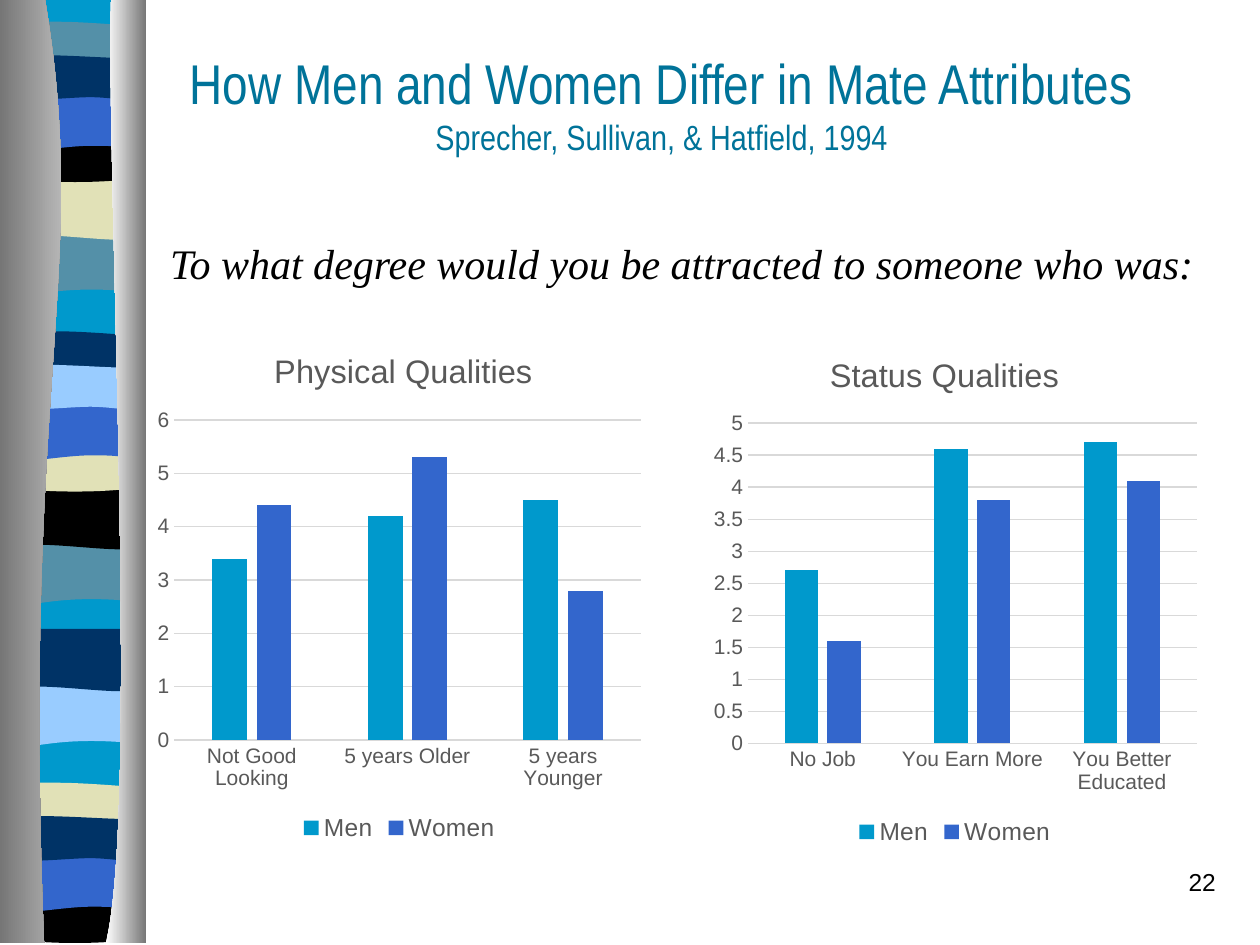
from dataclasses import dataclass

from lxml.etree import SubElement
from pptx import Presentation
from pptx.chart.data import CategoryChartData as ChartData
from pptx.dml.color import RGBColor as Rgb
from pptx.enum.chart import XL_CHART_TYPE as ChartType
from pptx.enum.chart import XL_LEGEND_POSITION as LegendPos
from pptx.enum.chart import XL_TICK_MARK as Tick
from pptx.enum.text import MSO_ANCHOR as Anchor
from pptx.enum.text import PP_ALIGN as Align
from pptx.oxml.ns import qn
from pptx.util import Cm, Pt


@dataclass(frozen=True)
class Theme:
    cyan: str = "0099CC"
    blue: str = "3366CC"
    navy: str = "003366"
    teal: str = "5490A8"
    sand: str = "E1E1B7"
    sky: str = "99CCFF"
    black: str = "000000"
    white: str = "FFFFFF"
    heading: str = "007399"
    label: str = "595959"
    grid: str = "D9D9D9"
    fold_dark: str = "767676"
    fold_light: str = "D5D5D5"
    sans: str = "Arial"
    narrow: str = "Arial Narrow"
    serif: str = "Times New Roman"
    title_size: float = 32
    source_size: float = 20
    question_size: float = 24
    chart_title_size: float = 18.6
    small_size: float = 14
    axis_size: float = 12


def apply_format(target, values):
    for name, value in values.items():
        setattr(target, name, value)


class SlideMaker:
    def __init__(self, slide, theme):
        self.shapes, self.theme = slide.shapes, theme

    def font(self, font, face, size, color, italic=False):
        apply_format(font, {"name": face, "size": Pt(size), "bold": False, "italic": italic})
        font.color.rgb = Rgb.from_string(color)

    def area(self, outline, *colors, top=0):
        """Closed outline of steps: one point is a line, three are a Bezier curve.

        One colour fills it, two make a gradient to the right.
        """
        (start,), *steps = [[(Cm(x), Cm(y + top)) for x, y in step] for step in outline]
        builder = self.shapes.build_freeform(*start)
        builder.add_line_segments([point for step in steps for point in step], close=True)
        shape = builder.convert_to_shape()
        lines = iter(list(shape._element.iter(qn("a:lnTo"))))
        for step in steps:
            parts = [next(lines) for _ in step]
            if len(parts) == 3:
                curve = SubElement(parts[0].getparent(), qn("a:cubicBezTo"))
                parts[0].addprevious(curve)
                for part in parts:
                    curve.append(part[0])
                    part.getparent().remove(part)

        shape.shadow.inherit = False
        shape.line.fill.background()
        if len(colors) == 1:
            shape.fill.solid()
            shape.fill.fore_color.rgb = Rgb.from_string(colors[0])
        else:
            shape.fill.gradient()
            shape.fill.gradient_angle = 0
            for stop, color in zip(shape.fill.gradient_stops, colors):
                stop.color.rgb = Rgb.from_string(color)

    def text(self, box, lines, align=Align.LEFT, anchor=Anchor.TOP):
        frame = self.shapes.add_textbox(*map(Cm, box)).text_frame
        apply_format(frame, {"word_wrap": True, "vertical_anchor": anchor})
        for i, (words, *style) in enumerate(lines):
            paragraph = frame.add_paragraph() if i else frame.paragraphs[0]
            paragraph.alignment = align
            run = paragraph.add_run()
            run.text = words
            self.font(run.font, *style)

    def place(self, parent, index, **values):
        for old in parent.findall(qn("c:layout")):
            parent.remove(old)
        layout = SubElement(parent, qn("c:layout"))
        parent.insert(index, layout)
        manual = SubElement(layout, qn("c:manualLayout"))
        for tag, value in values.items():
            SubElement(manual, qn(f"c:{tag}")).set("val", str(value))

    def chart(self, box, title, categories, series, top_value, step, plot):
        theme = self.theme
        data = ChartData()
        data.categories = categories
        for name, values, _ in series:
            data.add_series(name, values)
        chart = self.shapes.add_chart(ChartType.COLUMN_CLUSTERED, *map(Cm, box), data).chart
        self.font(chart.font, theme.sans, theme.axis_size, theme.label)

        # Title and plot position, as shares of the chart's size
        title_frame = chart.chart_title.text_frame
        title_frame.text = title
        self.font(title_frame.paragraphs[0].runs[0].font, theme.sans,
                  theme.chart_title_size, theme.label)
        space = chart._chartSpace
        self.place(space.find(".//" + qn("c:title")), 1,
                   xMode="edge", yMode="edge", x=0.24, y=0.02)
        width, height = box[2:]
        x, y, w, h = plot
        self.place(space.find(".//" + qn("c:plotArea")), 0, layoutTarget="inner",
                   xMode="edge", yMode="edge",
                   x=x / width, y=y / height, w=w / width, h=h / height)

        # Columns
        columns = chart.plots[0]
        apply_format(columns, {"gap_width": 219, "overlap": -27, "vary_by_categories": False})
        for bars, (_, _, color) in zip(columns.series, series):
            bars.format.fill.solid()
            bars.format.fill.fore_color.rgb = Rgb.from_string(color)

        # Axes and legend
        ticks = {"major_tick_mark": Tick.NONE, "minor_tick_mark": Tick.NONE}
        scale = {"minimum_scale": 0, "maximum_scale": top_value, "major_unit": step,
                 "has_major_gridlines": True}
        apply_format(chart.category_axis, ticks)
        apply_format(chart.value_axis, ticks | scale)
        for axis in (chart.category_axis, chart.value_axis):
            self.font(axis.tick_labels.font, theme.sans, theme.axis_size, theme.label)
        for part in (chart.category_axis, chart.value_axis.major_gridlines):
            part.format.line.width = Pt(0.75)
            part.format.line.color.rgb = Rgb.from_string(theme.grid)
        chart.value_axis.format.line.fill.background()
        chart.has_legend = True
        apply_format(chart.legend, {"position": LegendPos.BOTTOM, "include_in_layout": False})
        self.font(chart.legend.font, theme.sans, theme.small_size, theme.label)


def main():
    theme = Theme()
    deck = Presentation()
    apply_format(deck, {"slide_width": Cm(25.4), "slide_height": Cm(19.05)})
    maker = SlideMaker(deck.slides.add_slide(deck.slide_layouts[6]), theme)

    # Ribbon of coloured bands: outlines from the top of each band
    left, right = 0.13, 2.88
    corner, depth = [(right, 0)], 1.2
    maker.area([corner, [(right, 18.97)], [(left, 18.97)], [(left, 0)]], theme.cyan)
    wave = [corner, [(right, depth)], [(0.97, 0.99), (0.58, 1.4), (left, depth)], [(left, 0)]]
    ripple = [corner, [(right, depth)], [(2.43, 1.38), (0.98, 1.05), (left, depth)], [(left, 0)]]
    dune = [[(right, 0.13)], [(right, 0.74)], [(2.43, 0.86), (0.6, 0.86), (left, 0.74)],
            [(left, 0.13)], [(0.3, 0), (0.73, 0.03), (1.19, 0.03)],
            [(1.65, 0.03), (2.53, 0.1), (right, 0.13)]]
    bowl = [corner, [(right, 0.81)], [(2.43, 0.97), (0.6, 0.97), (left, 0.81)],
            [(left, 0)], [(1.8, 0.13), (2.3, 0), (right, 0)]]
    arch = [corner, [(right, depth)], [(2.47, 1.06), (2.28, 1.06), (1.82, 1.06)],
            [(1.36, 1.06), (0.56, depth), (left, depth)], [(left, 0)]]
    crest = [[(right, 0.13)], [(right, 0.92)], [(2.7, 1.04), (2.29, 0.92), (1.82, 0.92)],
             [(1.36, 0.92), (0.44, 1.04), (left, 0.92)], [(left, 0.13)],
             [(0.5, 0), (2, 0.13), (2.46, 0.13)]]
    lower = ((wave, 4.7), (ripple, 3.58))
    upper = ((dune, 0.41), (bowl, 2.74), (arch, 1.88), (crest, 1.04))
    repeats = (
        (0, lower + upper,
         (theme.teal, theme.sand, theme.teal, theme.black, theme.blue, theme.navy)),
        (6.24, lower + upper,
         (theme.teal, theme.black, theme.navy, theme.sand, theme.blue, theme.sky)),
        (9.1, lower, (theme.sky, theme.navy)),
        (15.34, upper, (theme.sand, theme.black, theme.blue, theme.navy)),
    )
    for shift, bands, colors in repeats:
        for (band, top), color in zip(bands, colors):
            maker.area(band, color, top=top + shift)

    # Grey folds on both sides of the ribbon
    end = 19.02
    maker.area([[(0.91, 0)], [(1.83, 5.49), (0.43, 7.52), (0.89, end)],
                [(0, end)], [(0, 0)]], theme.fold_dark, theme.fold_light)
    maker.area([[(2.24, 0)], [(2.13, 3.18), (2.82, 16.41), (2.13, end)],
                [(2.95, end)], [(2.95, 0)]], theme.white, theme.fold_dark)

    # Heading
    maker.text((3.18, 0.83, 20.32, 2.48), [
        ("How Men and Women Differ in Mate Attributes",
         theme.narrow, theme.title_size, theme.heading),
        ("Sprecher, Sullivan, & Hatfield, 1994",
         theme.narrow, theme.source_size, theme.heading),
    ], Align.CENTER, Anchor.MIDDLE)

    # Charts
    charts = (
        ((2.97, 6.71), "Physical Qualities",
         ("Not Good Looking", "5 years Older", "5 years Younger"),
         (3.4, 4.2, 4.5), (4.4, 5.3, 2.8), 6, 1, (0.54, 1.76, 9.41, 6.45)),
        ((14.17, 6.79), "Status Qualities",
         ("No Job", "You Earn More", "You Better Educated"),
         (2.7, 4.6, 4.7), (1.6, 3.8, 4.1), 5, 0.5, (0.91, 1.74, 9.05, 6.46)),
    )
    for place, title, categories, men, women, top_value, step, plot in charts:
        series = (("Men", men, theme.cyan), ("Women", women, theme.blue))
        maker.chart((*place, 10.16, 10.36), title, categories, series, top_value, step, plot)

    # Question and slide number
    maker.text((3.18, 4.66, 21.39, 1.27), [
        ("To what degree would you be attracted to someone who was:",
         theme.serif, theme.question_size, theme.black, True)])
    maker.text((19.48, 17.35, 5.28, 1.27),
               [("22", theme.sans, theme.small_size, theme.black)], Align.RIGHT)

    deck.save("out.pptx")


if __name__ == "__main__":
    main()
